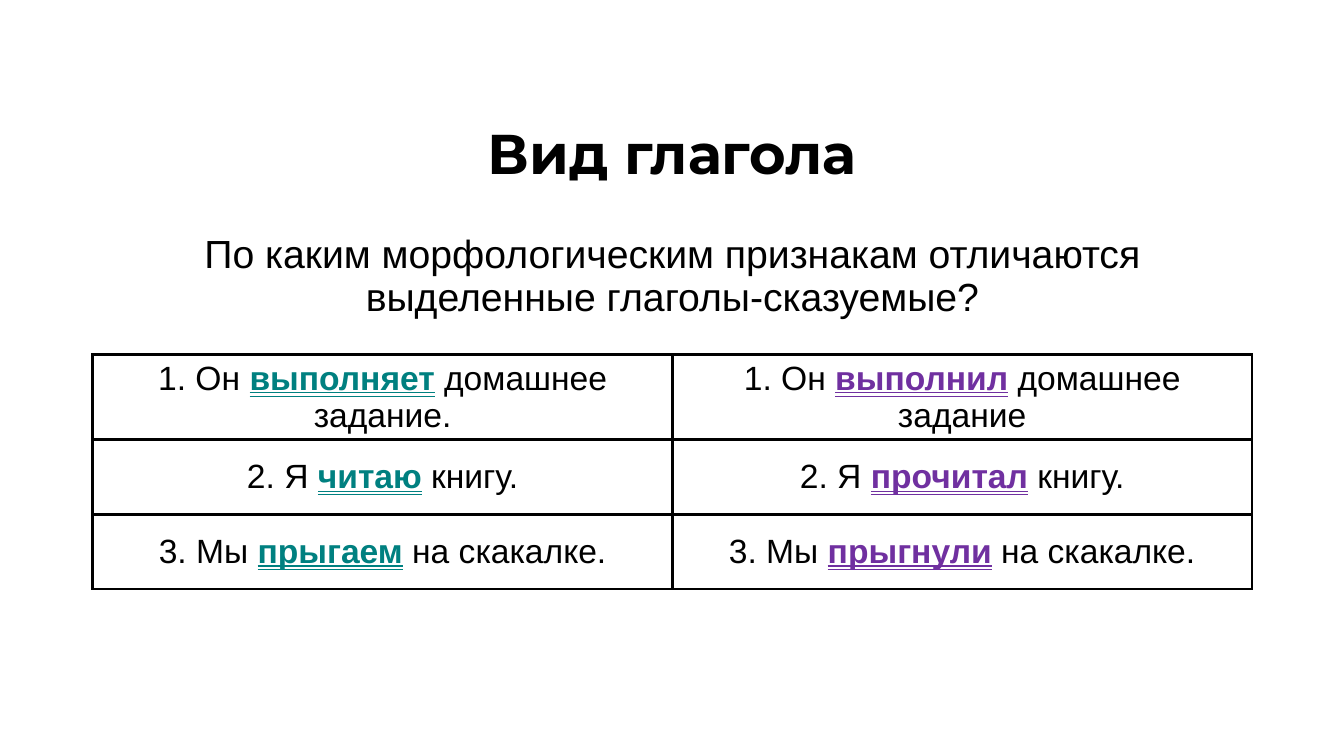
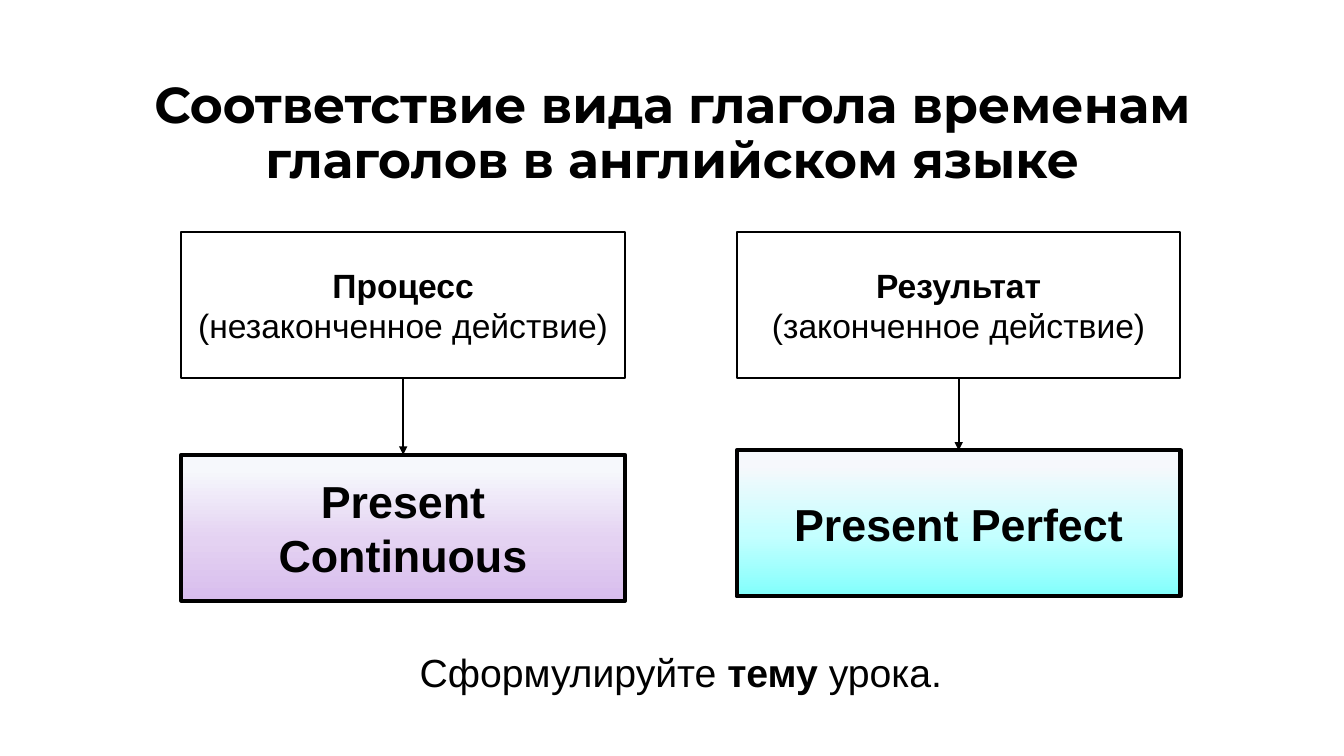
from copy import deepcopy
from dataclasses import dataclass

from lxml.etree import SubElement
from pptx import Presentation
from pptx.dml.color import RGBColor
from pptx.enum.shapes import MSO_CONNECTOR, MSO_SHAPE
from pptx.enum.text import MSO_ANCHOR, MSO_AUTO_SIZE, MSO_UNDERLINE, PP_ALIGN
from pptx.oxml.ns import qn
from pptx.util import Cm, Pt


@dataclass(frozen=True)
class Theme:
    black: RGBColor = RGBColor(0, 0, 0)
    white: RGBColor = RGBColor(255, 255, 255)
    teal: RGBColor = RGBColor(0x00, 0x80, 0x80)
    purple: RGBColor = RGBColor(0x70, 0x30, 0xA0)
    lilac_stops: tuple = ((0.1, "F6F8FC"), (0.58, "E4D2F2"), (1, "D8BDED"))
    aqua_stops: tuple = ((0.1, "F6F8FC"), (0.58, "C5FFFF"), (1, "81FFFC"))
    title_font: str = "Montserrat"
    text_font: str = "Arial"
    title_size: int = 40
    long_title_size: int = 36
    tense_size: int = 32
    body_size: int = 28
    label_size: int = 24


theme = Theme()


def format_paragraph(paragraph, size, bold=None, font_name=theme.text_font):
    paragraph.alignment = PP_ALIGN.CENTER
    paragraph.font.name = font_name
    paragraph.font.size = Pt(size)
    paragraph.font.bold = bold
    paragraph.font.color.rgb = theme.black


def add_box(slide, left, top, line_width):
    box = slide.shapes.add_shape(
        MSO_SHAPE.RECTANGLE, Cm(left), Cm(top), Cm(11.18), Cm(3.68)
    )
    box.shadow.inherit = False
    box.fill.solid()
    box.fill.fore_color.rgb = theme.white
    box.line.color.rgb = theme.black
    box.line.width = Pt(line_width)
    box.text_frame.word_wrap = True
    box.text_frame.vertical_anchor = MSO_ANCHOR.MIDDLE
    return box


presentation = Presentation()
presentation.slide_width = Cm(33.87)
presentation.slide_height = Cm(19.05)
content_left, content_width = 2.34, 29.21

slides = []
for layout_index, title_text, title_top, title_size in (
    (1, "Вид глагола", 2.11, theme.title_size),
    (
        5,
        "Соответствие вида глагола временам глаголов в английском языке",
        1.55,
        theme.long_title_size,
    ),
):
    slide = presentation.slides.add_slide(presentation.slide_layouts[layout_index])
    title = slide.shapes.title
    title.left, title.top = Cm(content_left), Cm(title_top)
    title.width, title.height = Cm(content_width), Cm(3.68)
    title.text_frame.text = title_text
    title.text_frame.auto_size = MSO_AUTO_SIZE.NONE
    title.text_frame.vertical_anchor = MSO_ANCHOR.MIDDLE
    paragraph = title.text_frame.paragraphs[0]
    paragraph.line_spacing = 0.9
    format_paragraph(paragraph, title_size, True, theme.title_font)
    slides.append(slide)
aspect_slide, tense_slide = slides

question = aspect_slide.placeholders[1]
question.left, question.top = Cm(content_left), Cm(5.79)
question.width, question.height = Cm(content_width), Cm(2.64)
question.text_frame.text = (
    "По каким морфологическим признакам отличаются выделенные глаголы-сказуемые?"
)
question.text_frame.auto_size = MSO_AUTO_SIZE.NONE
paragraph = question.text_frame.paragraphs[0]
paragraph.line_spacing = 0.9
paragraph.space_before = Pt(0)
properties = paragraph._p.get_or_add_pPr()
properties.set("marL", "0")
properties.set("indent", "0")
SubElement(properties, qn("a:buNone"))
format_paragraph(paragraph, theme.body_size)

sentences = (
    (
        ("1. Он ", "выполняет", " домашнее задание."),
        ("1. Он ", "выполнил", " домашнее задание"),
    ),
    (("2. Я ", "читаю", " книгу."), ("2. Я ", "прочитал", " книгу.")),
    (
        ("3. Мы ", "прыгаем", " на скакалке."),
        ("3. Мы ", "прыгнули", " на скакалке."),
    ),
)
row_height = 1.88
table = aspect_slide.shapes.add_table(
    len(sentences), 2, Cm(content_left), Cm(8.94),
    Cm(content_width), Cm(row_height * len(sentences)),
).table
table.first_row = False
table.horz_banding = False
for row_index, row in enumerate(sentences):
    for column_index, (start, verb, ending) in enumerate(row):
        cell = table.cell(row_index, column_index)
        cell.vertical_anchor = MSO_ANCHOR.MIDDLE
        cell_properties = cell._tc.get_or_add_tcPr()
        for side in ("a:lnL", "a:lnR", "a:lnT", "a:lnB"):
            border = SubElement(cell_properties, qn(side), w=str(Pt(2.25)))
            border_fill = SubElement(border, qn("a:solidFill"))
            SubElement(border_fill, qn("a:srgbClr"), val=str(theme.black))
        cell.fill.solid()
        cell.fill.fore_color.rgb = theme.white
        paragraph = cell.text_frame.paragraphs[0]
        format_paragraph(paragraph, theme.label_size)
        for text in (start, verb, ending):
            run = paragraph.add_run()
            run.text = text
            if text == verb:
                run.font.bold = True
                run.font.underline = MSO_UNDERLINE.DOUBLE_LINE
                run.font.color.rgb = (theme.teal, theme.purple)[column_index]

for left, meaning, detail, tense, tense_top, stops in (
    (4.57, "Процесс", "(незаконченное действие)",
     "Present Continuous", 11.46, theme.lilac_stops),
    (18.57, "Результат", "(законченное действие)",
     "Present Perfect", 11.35, theme.aqua_stops),
):
    meaning_box = add_box(tense_slide, left, 5.84, 1.5)
    paragraph = meaning_box.text_frame.paragraphs[0]
    format_paragraph(paragraph, theme.label_size)
    run = paragraph.add_run()
    run.text = meaning
    run.font.bold = True
    paragraph.add_line_break()
    paragraph.add_run().text = detail

    tense_box = add_box(tense_slide, left, tense_top, 3)
    tense_box.text_frame.text = tense
    format_paragraph(tense_box.text_frame.paragraphs[0], theme.tense_size, True)
    tense_box.fill.gradient()
    tense_box.fill.gradient_angle = 270
    stop_list = tense_box._element.spPr.find(qn("a:gradFill")).find(qn("a:gsLst"))
    stop_list.append(deepcopy(stop_list[0]))
    for stop, (position, color) in zip(tense_box.fill.gradient_stops, stops):
        stop.position = position
        stop.color.rgb = RGBColor.from_string(color)

    arrow = tense_slide.shapes.add_connector(MSO_CONNECTOR.STRAIGHT, 0, 0, 0, 0)
    arrow.begin_connect(meaning_box, 2)
    arrow.end_connect(tense_box, 0)
    arrow.line.color.rgb = theme.black
    arrow.line.width = Pt(1.5)
    SubElement(arrow.line._get_or_add_ln(), qn("a:tailEnd"), type="triangle")
    SubElement(arrow._element.spPr, qn("a:effectLst"))

task = tense_slide.shapes.add_textbox(Cm(4.57), Cm(16.2), Cm(25.18), Cm(1.45))
task.text_frame.word_wrap = True
task.text_frame.auto_size = MSO_AUTO_SIZE.SHAPE_TO_FIT_TEXT
paragraph = task.text_frame.paragraphs[0]
format_paragraph(paragraph, theme.body_size)
for text, bold in (("Сформулируйте ", False), ("тему", True), (" урока.", False)):
    run = paragraph.add_run()
    run.text = text
    run.font.bold = bold

presentation.save("out.pptx")
